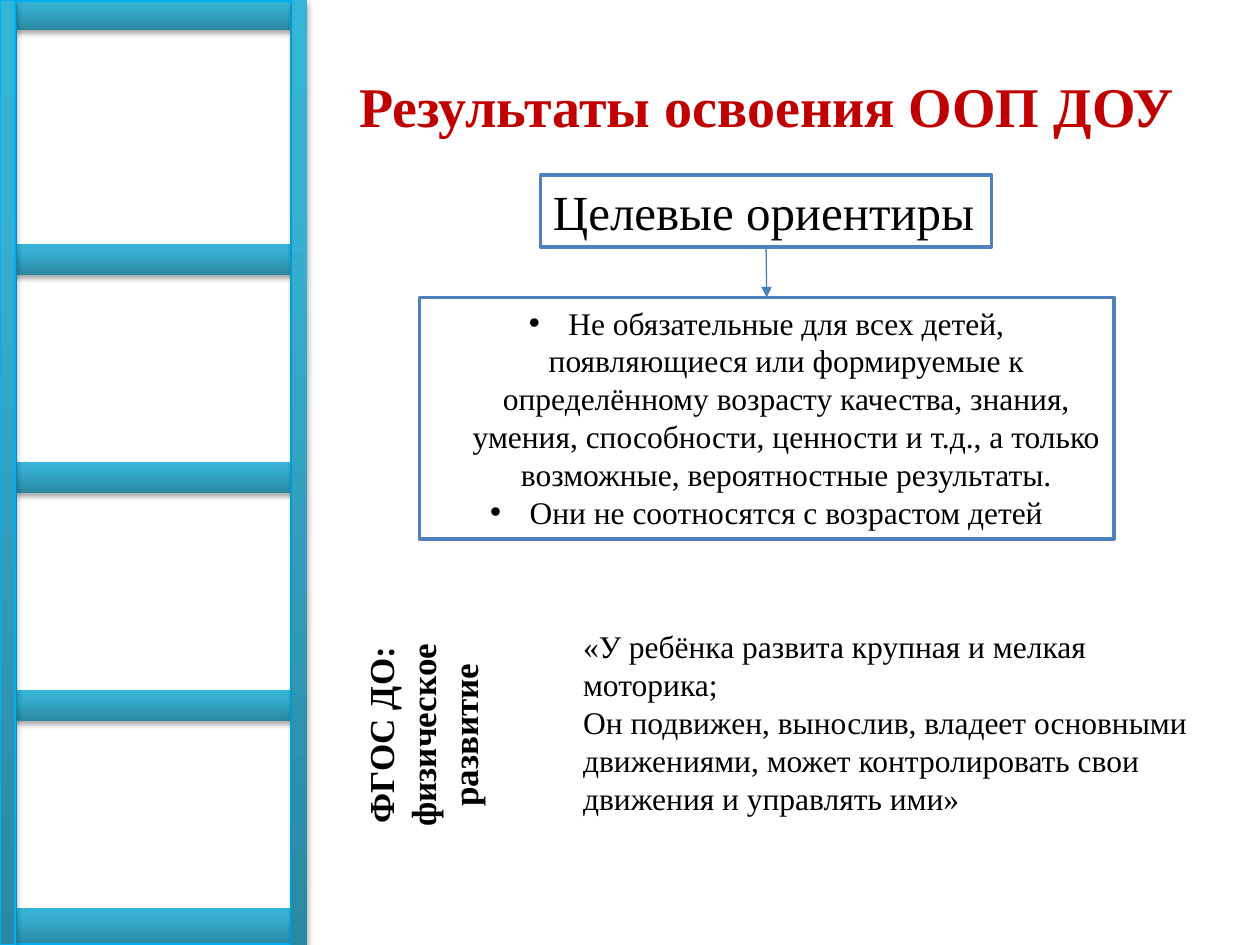
"""Build the slide on preschool programme results with a ladder on the left."""
from dataclasses import dataclass
from typing import Optional

from lxml.etree import SubElement
from pptx import Presentation
from pptx.dml.color import RGBColor
from pptx.enum.shapes import MSO_CONNECTOR, MSO_SHAPE
from pptx.enum.text import MSO_ANCHOR, MSO_AUTO_SIZE, PP_ALIGN
from pptx.oxml.ns import qn
from pptx.util import Pt

FONT = "Times New Roman"
WHITE = RGBColor(0xFF, 0xFF, 0xFF)
BLACK = RGBColor(0x00, 0x00, 0x00)
RED = RGBColor(0xC0, 0x00, 0x00)
BORDER_BLUE = RGBColor(0x4F, 0x81, 0xBD)
ARROW_BLUE = RGBColor(0x4B, 0x7E, 0xBC)
SKY_BLUE = RGBColor(0x00, 0xB0, 0xF0)
TEAL_DARK = RGBColor(0x2A, 0x88, 0xA2)
TEAL = RGBColor(0x37, 0xB1, 0xD2)
TEAL_LIGHT = RGBColor(0x34, 0xB4, 0xD6)
GRADIENT_STOPS = ((0, TEAL_DARK), (80, TEAL), (100, TEAL_LIGHT))
SLIDE_HEIGHT = 540
RAIL_WIDTH = 8.64
BULLET_INDENT = 22.5


@dataclass(frozen=True)
class Box:
    left: float
    top: float
    width: float
    height: float

    def lengths(self) -> tuple:
        return Pt(self.left), Pt(self.top), Pt(self.width), Pt(self.height)


@dataclass(frozen=True)
class Bar:
    box: Box
    line_width: float = 0
    filled: bool = True


@dataclass(frozen=True)
class TextBlock:
    box: Box
    paragraphs: tuple
    size: float
    color: RGBColor = BLACK
    bold: bool = False
    alignment: PP_ALIGN = PP_ALIGN.LEFT
    wrap: bool = True
    bulleted: bool = False
    direction: Optional[str] = None


RUNGS = [Bar(Box(RAIL_WIDTH, top, 164.16, 17.28)) for top in (0, 394.56, 264.24, 139.68)]
LADDER = (
    *RUNGS,
    Bar(Box(0, 519.12, 167.04, 20.88)),
    Bar(Box(RAIL_WIDTH, 0, 158.4, SLIDE_HEIGHT), line_width=2, filled=False),
    Bar(Box(0, 0, RAIL_WIDTH, SLIDE_HEIGHT), line_width=0.75),
    Bar(Box(167.04, 0, RAIL_WIDTH, SLIDE_HEIGHT)),
)
TITLE = TextBlock(
    Box(195.84, 37.44, 484.56, 46.08), ("Результаты освоения ООП ДОУ",),
    32, RED, bold=True, alignment=PP_ALIGN.CENTER, wrap=False,
)
TARGETS = TextBlock(
    Box(308.88, 100.08, 257.76, 41.04), ("Целевые ориентиры",), 28, wrap=False,
)
RESULTS = TextBlock(
    Box(239.76, 169.92, 396.72, 138.24),
    (
        "Не обязательные для всех детей, появляющиеся или формируемые к "
        "определённому возрасту качества, знания, умения, способности, "
        "ценности и т.д., а только возможные, вероятностные результаты.",
        "Они не соотносятся с возрастом детей",
    ),
    18, alignment=PP_ALIGN.CENTER, bulleted=True,
)
QUOTE = TextBlock(
    Box(326.16, 354.96, 378.72, 116.64),
    (
        "«У ребёнка развита крупная и мелкая моторика;",
        "Он подвижен, вынослив, владеет основными движениями, может "
        "контролировать свои движения и управлять ими»",
    ),
    18,
)
STANDARD = TextBlock(
    Box(201.6, 343.44, 87.12, 153.36), ("ФГОС ДО: физическое развитие",),
    20, bold=True, alignment=PP_ALIGN.CENTER, direction="vert270",
)


def apply_gradient(shape) -> None:
    shape.fill.gradient()
    shape.fill.gradient_angle = 90
    stop_list = shape._element.spPr.find(".//" + qn("a:gsLst"))
    for stop in list(stop_list):
        stop_list.remove(stop)
    for position, color in GRADIENT_STOPS:
        stop = SubElement(stop_list, qn("a:gs"), pos=str(position * 1000))
        SubElement(stop, qn("a:srgbClr"), val=str(color))


def apply_shadow(shape) -> None:
    effects = shape._element.spPr.find(qn("a:effectLst"))
    shadow = SubElement(
        effects, qn("a:outerShdw"), blurRad=str(Pt(3.1)), dist=str(Pt(1.8)),
        dir="5400000", rotWithShape="0",
    )
    color = SubElement(shadow, qn("a:srgbClr"), val="000000")
    SubElement(color, qn("a:alpha"), val="35000")


def draw_bar(slide, bar: Bar) -> None:
    shape = slide.shapes.add_shape(MSO_SHAPE.RECTANGLE, *bar.box.lengths())
    shape.shadow.inherit = False
    if bar.line_width:
        shape.line.color.rgb = SKY_BLUE
        shape.line.width = Pt(bar.line_width)
    else:
        shape.line.fill.background()
    if bar.filled:
        apply_gradient(shape)
        apply_shadow(shape)
    else:
        shape.fill.background()


def add_bullet(paragraph) -> None:
    properties = paragraph._p.get_or_add_pPr()
    properties.set("marL", str(Pt(BULLET_INDENT)))
    properties.set("indent", str(-Pt(BULLET_INDENT)))
    SubElement(properties, qn("a:buFont"), typeface="Arial")
    SubElement(properties, qn("a:buChar"), char="•")


def write_text(shape, block: TextBlock) -> None:
    frame = shape.text_frame
    frame.text = "\n".join(block.paragraphs)
    frame.word_wrap = block.wrap
    frame.auto_size = MSO_AUTO_SIZE.SHAPE_TO_FIT_TEXT
    frame.vertical_anchor = MSO_ANCHOR.TOP
    if block.direction:
        frame._txBody.bodyPr.set("vert", block.direction)
    for paragraph in frame.paragraphs:
        paragraph.alignment = block.alignment
        if block.bulleted:
            add_bullet(paragraph)
        paragraph.font.name = FONT
        paragraph.font.size = Pt(block.size)
        paragraph.font.bold = block.bold
        paragraph.font.color.rgb = block.color


def draw_title(slide, block: TextBlock) -> None:
    title = slide.shapes.title
    title.left, title.top, title.width, title.height = block.box.lengths()
    write_text(title, block)


def draw_framed_text(slide, block: TextBlock):
    shape = slide.shapes.add_shape(MSO_SHAPE.RECTANGLE, *block.box.lengths())
    shape.shadow.inherit = False
    shape.fill.solid()
    shape.fill.fore_color.rgb = WHITE
    shape.line.color.rgb = BORDER_BLUE
    shape.line.width = Pt(2)
    write_text(shape, block)
    return shape


def draw_arrow(slide, upper, lower) -> None:
    connector = slide.shapes.add_connector(MSO_CONNECTOR.STRAIGHT, 0, 0, 0, 0)
    connector.begin_connect(upper, 2)
    connector.end_connect(lower, 0)
    connector.line.color.rgb = ARROW_BLUE
    connector.line.width = Pt(0.75)
    SubElement(connector.line._get_or_add_ln(), qn("a:tailEnd"), type="triangle")
    SubElement(connector._element.spPr, qn("a:effectLst"))


def main() -> None:
    presentation = Presentation()
    presentation.slide_width = Pt(720)
    presentation.slide_height = Pt(SLIDE_HEIGHT)
    slide = presentation.slides.add_slide(presentation.slide_layouts[5])
    for bar in LADDER:
        draw_bar(slide, bar)
    draw_title(slide, TITLE)
    targets = draw_framed_text(slide, TARGETS)
    results = draw_framed_text(slide, RESULTS)
    draw_arrow(slide, targets, results)
    for block in (QUOTE, STANDARD):
        write_text(slide.shapes.add_textbox(*block.box.lengths()), block)
    presentation.save("out.pptx")


if __name__ == "__main__":
    main()
